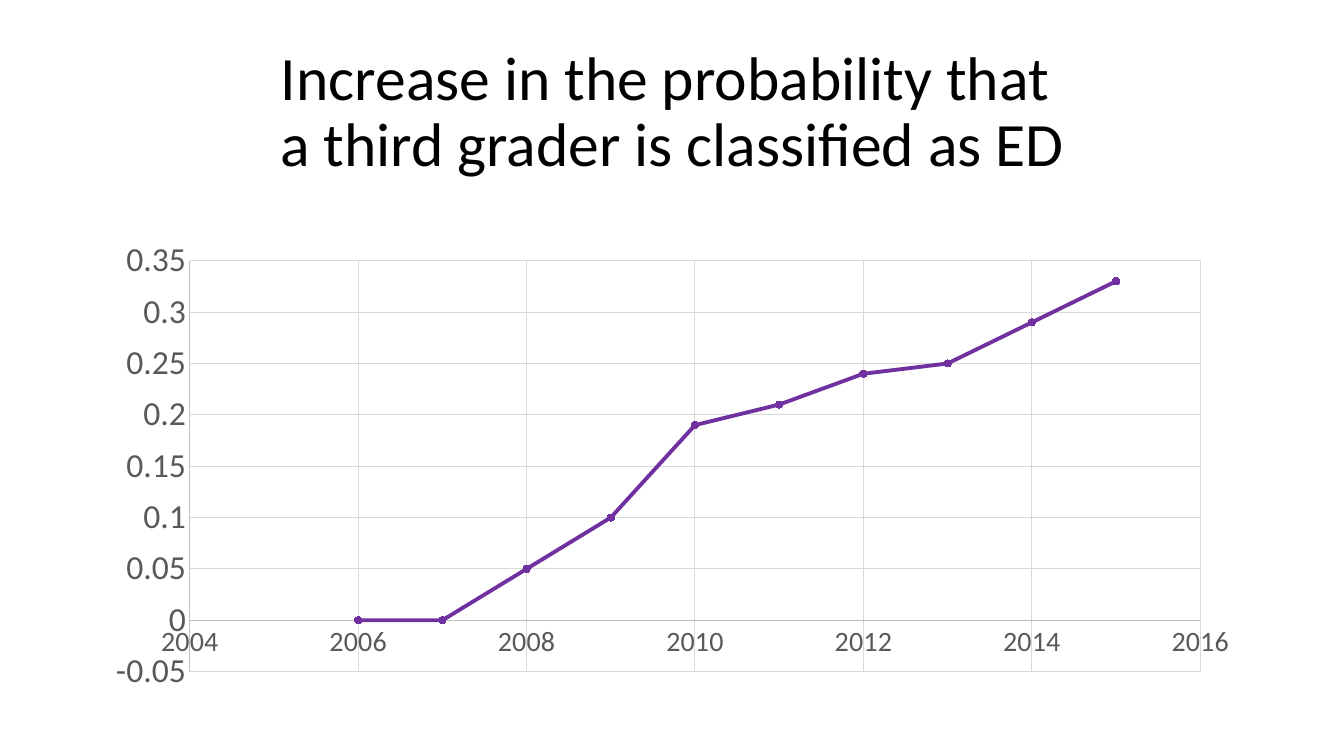
from dataclasses import dataclass

from pptx import Presentation
from pptx.chart.axis import ValueAxis
from pptx.chart.chart import Chart
from pptx.chart.data import XyChartData
from pptx.dml.color import RGBColor
from pptx.dml.line import LineFormat
from pptx.enum.chart import XL_CHART_TYPE, XL_MARKER_STYLE, XL_TICK_MARK
from pptx.enum.text import MSO_ANCHOR, PP_ALIGN
from pptx.slide import Slide
from pptx.util import Inches, Pt

SCATTER_LINES = XL_CHART_TYPE.XY_SCATTER_LINES
CIRCLE = XL_MARKER_STYLE.CIRCLE
NO_TICKS = XL_TICK_MARK.NONE
MIDDLE = MSO_ANCHOR.MIDDLE
CENTER = PP_ALIGN.CENTER
TITLE_ONLY = 5


@dataclass(frozen=True)
class Theme:
    font: str = "Calibri"
    title_color: str = "000000"
    label_color: str = "595959"
    axis_color: str = "BFBFBF"
    grid_color: str = "D9D9D9"
    series_color: str = "7030A0"
    title_size: float = 44
    chart_size: float = 10
    hairline: float = 0.75
    series_width: float = 2.75
    marker_size: int = 5


@dataclass(frozen=True)
class AxisScale:
    minimum: float
    maximum: float
    step: float
    label_size: float


THEME = Theme()
YEAR_SCALE = AxisScale(2004, 2016, 2, 20)
INCREASE_SCALE = AxisScale(-0.05, 0.35, 0.05, 24)
TITLE = "Increase in the probability that \va third grader is classified as ED"
FIRST_YEAR = 2006
INCREASES = (0, 0, 0.05, 0.1, 0.19, 0.21, 0.24, 0.25, 0.29, 0.33)


def style_line(line: LineFormat, color: str, width: float) -> None:
    line.color.rgb = RGBColor.from_string(color)
    line.width = Pt(width)


def style_axis(axis: ValueAxis, scale: AxisScale) -> None:
    axis.minimum_scale = scale.minimum
    axis.maximum_scale = scale.maximum
    axis.major_unit = scale.step
    axis.major_tick_mark = NO_TICKS
    axis.minor_tick_mark = NO_TICKS
    axis.has_major_gridlines = True
    style_line(axis.major_gridlines.format.line, THEME.grid_color, THEME.hairline)
    style_line(axis.format.line, THEME.axis_color, THEME.hairline)
    labels = axis.tick_labels
    labels.number_format = "General"
    labels.number_format_is_linked = False
    labels.font.name = THEME.font
    labels.font.size = Pt(scale.label_size)
    labels.font.color.rgb = RGBColor.from_string(THEME.label_color)


def style_series(chart: Chart) -> None:
    series = chart.plots[0].series[0]
    series.smooth = False
    style_line(series.format.line, THEME.series_color, THEME.series_width)
    marker = series.marker
    marker.style = CIRCLE
    marker.size = THEME.marker_size
    marker.format.fill.solid()
    marker.format.fill.fore_color.rgb = RGBColor.from_string(THEME.series_color)
    style_line(marker.format.line, THEME.series_color, THEME.hairline)


def add_title(slide: Slide) -> None:
    title = slide.shapes.title
    title.left, title.top = Inches(0.92), Inches(0.4)
    title.width, title.height = Inches(11.5), Inches(1.45)
    text_frame = title.text_frame
    text_frame.text = TITLE
    text_frame.vertical_anchor = MIDDLE
    paragraph = text_frame.paragraphs[0]
    paragraph.alignment = CENTER
    paragraph.line_spacing = 0.9
    for run in paragraph.runs:
        run.font.name = THEME.font
        run.font.size = Pt(THEME.title_size)
        run.font.color.rgb = RGBColor.from_string(THEME.title_color)


def add_probability_chart(slide: Slide) -> None:
    chart_data = XyChartData()
    points = chart_data.add_series("Series 1")
    for year, increase in enumerate(INCREASES, FIRST_YEAR):
        points.add_data_point(year, increase)
    chart = slide.shapes.add_chart(
        SCATTER_LINES, Inches(0.92), Inches(2.29), Inches(11.5), Inches(4.67), chart_data
    ).chart
    chart.has_title = False
    chart.has_legend = False
    chart.font.name = THEME.font
    chart.font.size = Pt(THEME.chart_size)
    chart.plots[0].vary_by_categories = False
    style_axis(chart.category_axis, YEAR_SCALE)
    style_axis(chart.value_axis, INCREASE_SCALE)
    style_series(chart)


def main() -> None:
    presentation = Presentation()
    presentation.slide_width = Inches(13.33)
    presentation.slide_height = Inches(7.5)
    slide = presentation.slides.add_slide(presentation.slide_layouts[TITLE_ONLY])
    # Title
    add_title(slide)
    # Line of yearly increases
    add_probability_chart(slide)
    presentation.save("out.pptx")


if __name__ == "__main__":
    main()
